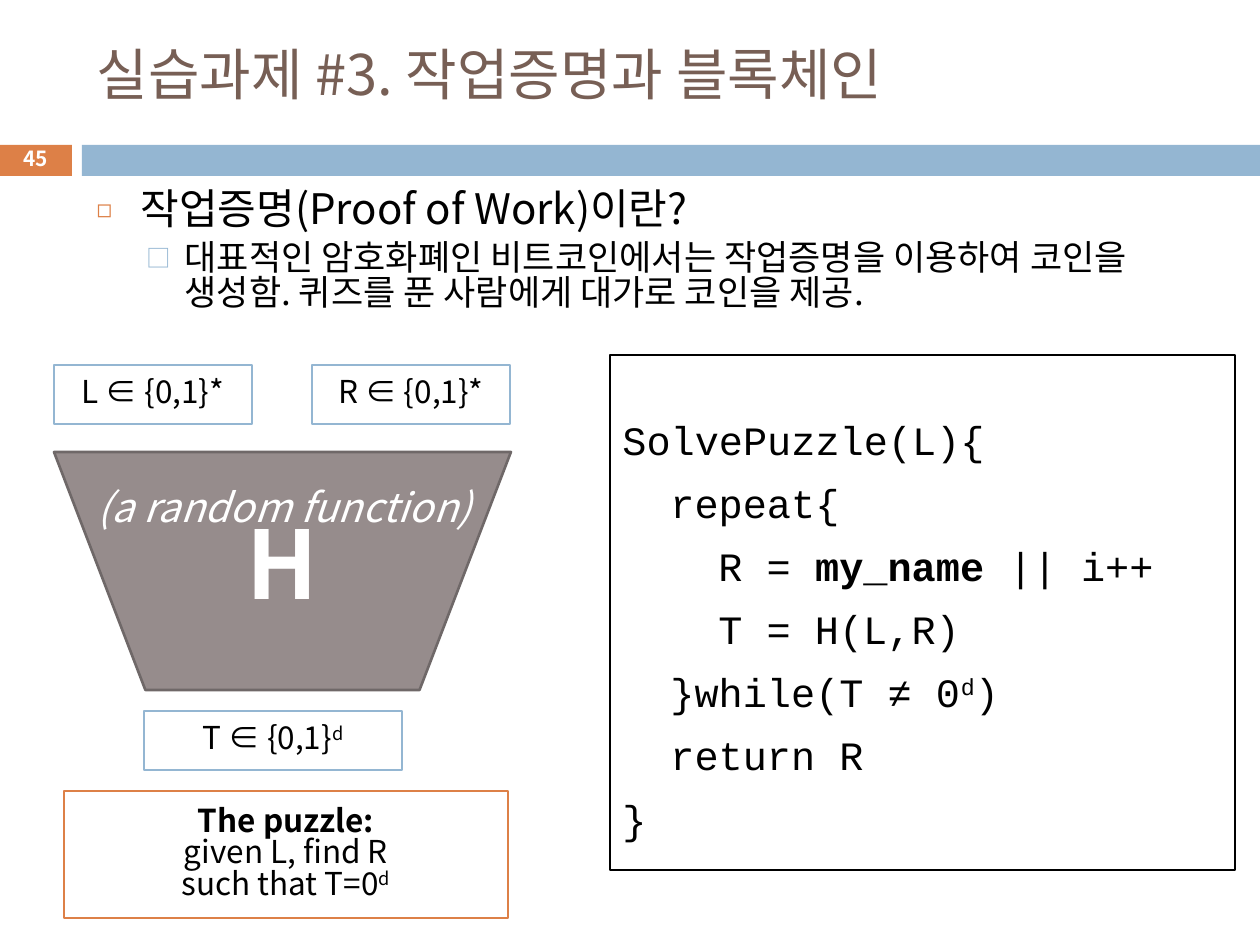
import pptx
import pptx.util
import pptx.oxml
import pptx.oxml.ns
import pptx.dml.color
import pptx.enum.shapes
import pptx.enum.text

SCALE = 914400 // 126
SANS, MONO = "Noto Sans CJK KR", "Courier New"
HUES = {"black": "000000", "white": "FFFFFF", "title": "775F55",
        "orange": "DD8047", "blue": "94B6D2", "taupe": "968C8C",
        "edge": "6F6868"}
KINDS = pptx.enum.shapes.MSO_SHAPE
ALIGN = pptx.enum.text.PP_ALIGN
ANCHOR = pptx.enum.text.MSO_ANCHOR
FIT = pptx.enum.text.MSO_AUTO_SIZE


def px(num):
    return pptx.util.Emu(num * SCALE)


def hue(name):
    return pptx.dml.color.RGBColor.from_string(HUES[name])


class Deck:
    def __init__(self, show, slide):
        self.show, self.slide = show, slide

    def run(self, para, text, size, color, font=SANS, style=""):
        """Add one run; style letters: b bold, i italic, ^ superscript."""
        part = para.add_run()
        part.text = text
        face = part.font
        face.name, face.size = font, pptx.util.Pt(size)
        face.bold, face.italic = "b" in style, "i" in style
        face.color.rgb = hue(color)
        props = part._r.get_or_add_rPr()
        if "^" in style:
            props.set("baseline", "30000")
        if font == SANS:
            east = pptx.oxml.parse_xml(
                f'<a:ea {pptx.oxml.ns.nsdecls("a")} typeface="{font}"/>')
            props.find(pptx.oxml.ns.qn("a:latin")).addnext(east)

    def fill(self, shape, lines, size, color="black", font=SANS,
             align=ALIGN.CENTER, pitch=0.83, before=0):
        """Write lines of (text, style) runs, one paragraph per line."""
        frame = shape.text_frame
        frame.word_wrap = True
        for num, line in enumerate(lines):
            para = frame.add_paragraph() if num else frame.paragraphs[0]
            para.alignment, para.line_spacing = align, pitch
            para.space_before = pptx.util.Pt(before)
            for text, style in line:
                self.run(para, text, size, color, font, style)
        return frame

    def place(self, shape, box):
        shape.left, shape.top, shape.width, shape.height = map(px, box)

    def shape(self, box, fill, line=None, kind=KINDS.RECTANGLE):
        item = self.slide.shapes.add_shape(kind, *map(px, box))
        item.shadow.inherit = False
        item.fill.solid()
        item.fill.fore_color.rgb = hue(fill)
        if line:
            item.line.color.rgb = hue(line)
            item.line.width = pptx.util.Pt(1.5)
        else:
            item.line.fill.background()
        item.text_frame.vertical_anchor = ANCHOR.MIDDLE
        return item

    def label(self, box, lines, size, color, **look):
        item = self.slide.shapes.add_textbox(*map(px, box))
        frame = self.fill(item, lines, size, color, **look)
        frame.vertical_anchor = ANCHOR.MIDDLE

    def title(self, box, text):
        item = self.slide.shapes.title
        self.place(item, box)
        frame = self.fill(item, [[(text, "")]], 32, "title", align=ALIGN.LEFT)
        frame.vertical_anchor, frame.auto_size = ANCHOR.MIDDLE, FIT.NONE

    def body(self, box, rows):
        item = self.slide.placeholders[1]
        self.place(item, box)
        lines = [[(row[0], "")] for row in rows]
        frame = self.fill(item, lines, 24, align=ALIGN.LEFT)
        frame.auto_size = FIT.NONE
        for level, (para, row) in enumerate(zip(frame.paragraphs, rows)):
            text, size, before, left, hang, mark, color, part = row
            para.level = level
            para.space_before = pptx.util.Pt(before)
            para.runs[0].font.size = pptx.util.Pt(size)
            props = para._p.get_or_add_pPr()
            props.set("marL", str(px(left)))
            props.set("indent", str(-px(hang)))
            space = pptx.oxml.ns.nsdecls("a")
            for xml in (
                    f'<a:buClr {space}><a:srgbClr val="{HUES[color]}"/></a:buClr>',
                    f'<a:buSzPct {space} val="{part * 1000}"/>',
                    f'<a:buFont {space} typeface="{SANS}"/>',
                    f'<a:buChar {space} char="{mark}"/>'):
                props.append(pptx.oxml.parse_xml(xml))

    def code(self, box, rows):
        """Draw a code panel; each row is (depth, runs)."""
        item = self.shape(box, "white", "black")
        frame = self.fill(item, [runs for depth, runs in rows], 23, font=MONO,
                          align=ALIGN.LEFT, pitch=1.0, before=8.5)
        frame.vertical_anchor, frame.margin_top = ANCHOR.TOP, px(60)
        for para, (depth, runs) in zip(frame.paragraphs, rows):
            props = para._p.get_or_add_pPr()
            props.set("marL", str(px(48 * depth)))
            props.set("indent", "0")


def main():
    show = pptx.Presentation()
    show.slide_width, show.slide_height = px(1260), px(945)
    deck = Deck(show, show.slides.add_slide(show.slide_layouts[1]))

    deck.shape((-1, 145, 73, 31), "orange")
    deck.shape((82, 145, 1178, 31), "blue")
    deck.title((84, 32, 1124, 93), "실습과제 #3. 작업증명과 블록체인")
    deck.body((84, 185, 1124, 694), [
        ("작업증명(Proof of Work)이란?", 24, 7, 44, 44, "◻", "orange", 60),
        ("대표적인 암호화폐인 비트코인에서는 작업증명을 이용하여 코인을 "
         "생성함. 퀴즈를 푼 사람에게 대가로 코인을 제공.",
         20, 5.5, 88, 38, "□", "blue", 70)])
    deck.label((-1, 143, 73, 34), [[("45", "b")]], 11.9, "white")

    hash_box = deck.shape((54, 452, 457, 238), "taupe", "edge",
                          KINDS.FLOWCHART_MANUAL_OPERATION)
    deck.fill(hash_box, [[("H", "b")]], 54, "white")
    for box, runs in (
            ((54, 365, 198, 59), [("L ∈ {0,1}*", "")]),
            ((312, 365, 198, 59), [("R ∈ {0,1}*", "")]),
            ((144, 711, 258, 59), [("T ∈ {0,1}", ""), ("d", "^")])):
        deck.fill(deck.shape(box, "white", "blue"), [runs], 18)

    deck.code((610, 355, 625, 515), [
        (0, [("SolvePuzzle(L){", "")]),
        (1, [("repeat{", "")]),
        (2, [("R = ", ""), ("my_name", "b"), (" || i++", "")]),
        (2, [("T = H(L,R)", "")]),
        (1, [("}while(T ≠ 0", ""), ("d", "^"), (")", "")]),
        (1, [("return R", "")]),
        (0, [("}", "")])])

    puzzle = deck.shape((64, 791, 444, 127), "white", "orange")
    deck.fill(puzzle, [[("The puzzle:", "b")], [("given L, find R", "")],
                       [("such that T=0", ""), ("d", "^")]], 18)
    deck.label((64, 480, 442, 62), [[("(a random function)", "i")]], 23, "white")
    show.save("out.pptx")


if __name__ == "__main__":
    main()
